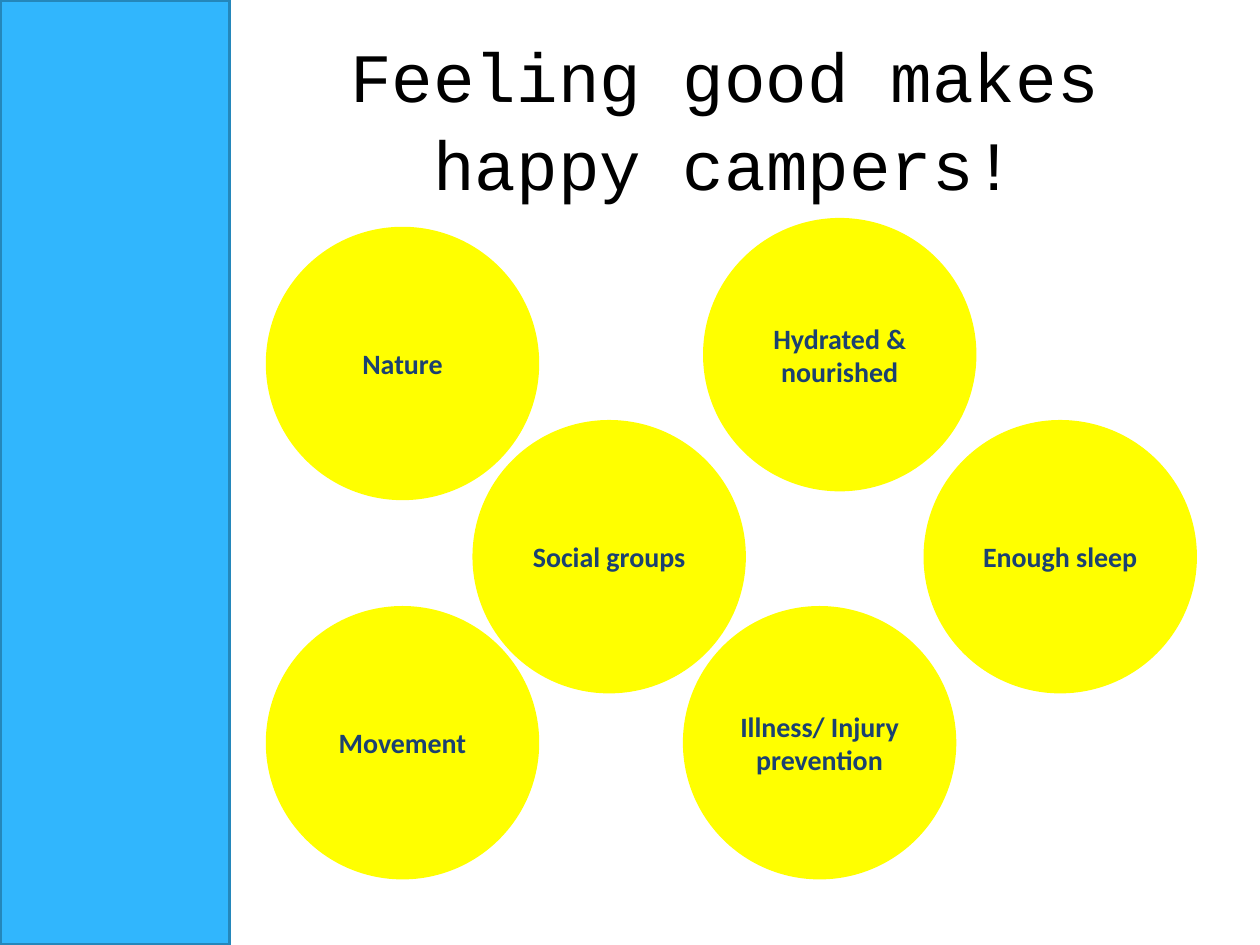
"""Build the slide on what makes happy campers."""
import pptx
import pptx.dml.color
import pptx.enum.shapes
import pptx.enum.text
import pptx.util

Pt = pptx.util.Pt
SHAPES = pptx.enum.shapes.MSO_SHAPE

TITLE = "Feeling good makes happy campers!"
LEFT, UPPER, MIDDLE, LOWER = 151.92, 129.6, 240, 346.32
CIRCLES = [
    ("Enough sleep", 527.76, MIDDLE),
    ("Movement", LEFT, LOWER),
    ("Hydrated & nourished", 401.76, 124.56),
    ("Illness/ Injury prevention", 390.24, LOWER),
    ("Nature", LEFT, UPPER),
    ("Social groups", 270, MIDDLE),
]
DIAMETER = 156.24
THEME = {
    "band": "31B6FD", "band_line": "2487BB", "circle": "FFFF00",
    "title": {"font": "Courier New", "size": 39.6, "color": "000000", "spacing": 1.06},
    "label": {"font": "Calibri", "size": 16, "color": "1B4171", "bold": True},
}


def rgb(value):
    return pptx.dml.color.RGBColor.from_string(value)


def write(box, text, font, size, color, bold=False, spacing=1.0):
    frame = box.text_frame
    frame.word_wrap = True
    frame.vertical_anchor = pptx.enum.text.MSO_ANCHOR.MIDDLE
    para = frame.paragraphs[0]
    para.alignment = pptx.enum.text.PP_ALIGN.CENTER
    para.line_spacing = spacing
    span = para.add_run()
    span.text = text
    span.font.name = font
    span.font.size = Pt(size)
    span.font.bold = bold
    span.font.color.rgb = rgb(color)


def add_filled(page, kind, left, top, width, height, fill, line=None):
    shape = page.shapes.add_shape(kind, Pt(left), Pt(top), Pt(width), Pt(height))
    shape.shadow.inherit = False
    shape.fill.solid()
    shape.fill.fore_color.rgb = rgb(fill)
    if line:
        shape.line.color.rgb = rgb(line)
        shape.line.width = Pt(2)
    else:
        shape.line.fill.background()
    return shape


def main():
    deck = pptx.Presentation()
    deck.slide_width, deck.slide_height = Pt(720), Pt(540)
    page = deck.slides.add_slide(deck.slide_layouts[6])
    add_filled(page, SHAPES.RECTANGLE, 0, 0, 131.04, 540, THEME["band"], THEME["band_line"])
    title = page.shapes.add_textbox(Pt(144), Pt(21.6), Pt(540), Pt(90))
    write(title, TITLE, **THEME["title"])
    for label, left, top in CIRCLES:
        circle = add_filled(page, SHAPES.OVAL, left, top, DIAMETER, DIAMETER, THEME["circle"])
        write(circle, label, **THEME["label"])
    deck.save("out.pptx")


if __name__ == "__main__":
    main()
